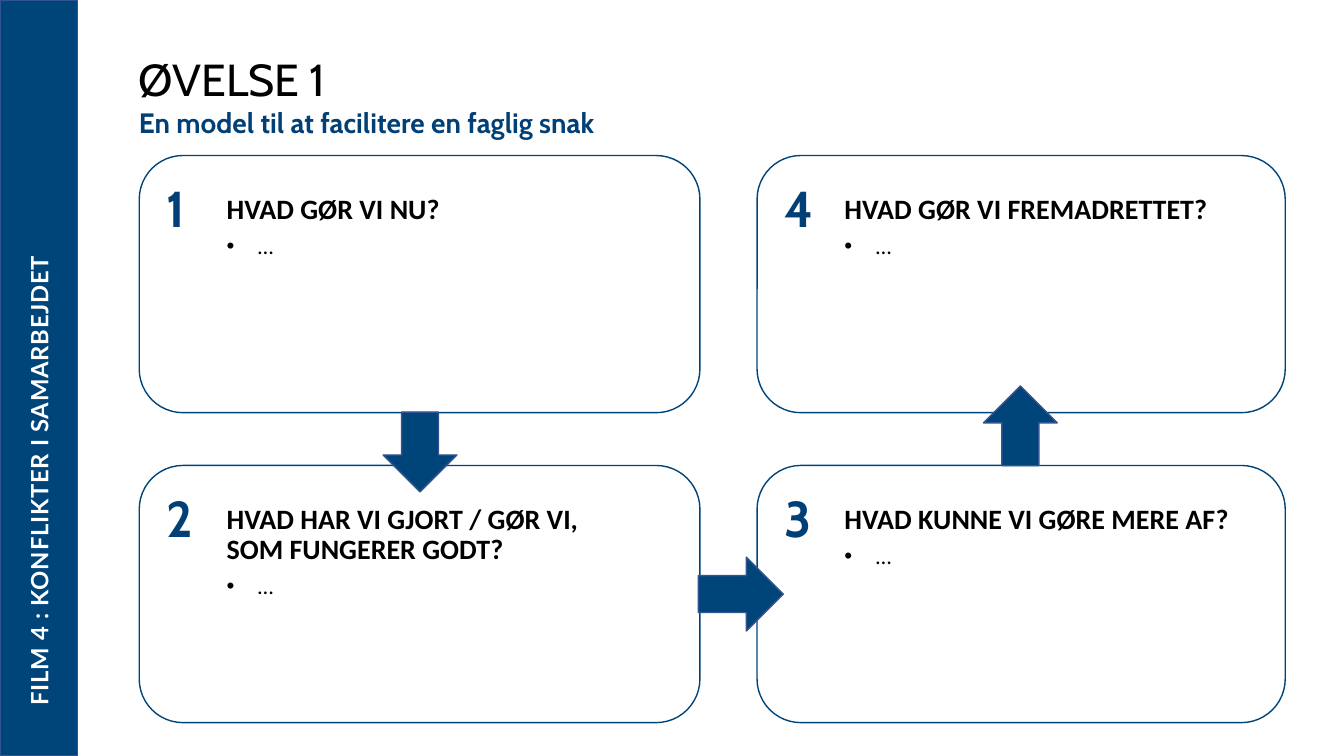
from pptx import Presentation
from pptx.dml.color import RGBColor
from pptx.enum.shapes import MSO_SHAPE as Shape
from pptx.enum.text import MSO_ANCHOR as Anchor, MSO_AUTO_SIZE as AutoSize, PP_ALIGN as Align
from pptx.oxml.ns import qn
from pptx.util import Cm, Pt
from lxml.etree import SubElement

COLORS = {"blue": "00457A", "navy": "004077", "edge": "325491",
          "white": "FFFFFF", "black": "000000"}


class ExerciseSlide:
    heading_font, body_font, banner_font = "Cabin", "Calibri", "Lato"

    def __init__(self, prs):
        self.slide = prs.slides.add_slide(prs.slide_layouts[6])

    def color(self, name):
        return RGBColor.from_string(COLORS[name])

    def style(self, paragraph, font, size, color, bold=False):
        paragraph.alignment = Align.LEFT
        for run in paragraph.runs:
            run.font.name, run.font.size, run.font.bold = font, Pt(size), bold
            run.font.color.rgb = self.color(color)

    def panel(self, preset, box, fill, line):
        panel = self.slide.shapes.add_shape(preset, *map(Cm, box))
        panel.shadow.inherit = False
        panel.fill.solid()
        panel.fill.fore_color.rgb = self.color(fill)
        panel.line.color.rgb = self.color(line)
        panel.line.width = Pt(1)
        return panel

    def text(self, box, lines):
        frame = self.slide.shapes.add_textbox(*map(Cm, box)).text_frame
        frame.word_wrap = True
        frame.auto_size = AutoSize.SHAPE_TO_FIT_TEXT
        frame.text = "\n".join(line[0] for line in lines)
        for paragraph, (_, size, color, bold) in zip(frame.paragraphs, lines):
            self.style(paragraph, self.heading_font, size, color, bold)

    def bullet(self, paragraph):
        props = paragraph._p.get_or_add_pPr()
        props.set("marL", str(Cm(0.79)))
        props.set("indent", str(-Cm(0.79)))
        SubElement(props, qn("a:buFont")).set("typeface", "Arial")
        SubElement(props, qn("a:buChar")).set("char", "•")

    def card(self, number, question, left, top, width, height):
        card = self.panel(Shape.ROUNDED_RECTANGLE, (left, top, width, height), "white", "blue")
        card.adjustments[0] = 0.17
        frame = card.text_frame
        frame.word_wrap = True
        frame.vertical_anchor = Anchor.TOP
        frame.margin_left = Cm(1.88)
        frame.margin_top = frame.margin_right = frame.margin_bottom = Cm(0.67)
        heading = frame.paragraphs[0]
        heading.text = question
        answer = frame.add_paragraph()
        answer.text = "…"
        for paragraph, size in ((heading, 20), (answer, 16)):
            paragraph.line_spacing = 0.9
            paragraph.space_after = Pt(size * 0.35)
            self.style(paragraph, self.body_font, size, "black", paragraph is heading)
        self.bullet(answer)
        self.text((left + 0.44, top + 0.41, 1.09, 1.8), [(number, 36, "navy", True)])

    def arrow(self, box, rotation):
        self.panel(Shape.RIGHT_ARROW, box, "blue", "edge").rotation = rotation

    def banner(self, title, box):
        frame = self.panel(Shape.RECTANGLE, box, "blue", "edge").text_frame
        frame.text = title
        frame.vertical_anchor = Anchor.MIDDLE
        frame.margin_bottom = Cm(1.27)
        frame._txBody.bodyPr.set("vert", "vert270")
        self.style(frame.paragraphs[0], self.banner_font, 17, "white", True)
        frame.paragraphs[0].runs[0].font._element.set("spc", "50")


def main():
    prs = Presentation()
    prs.slide_width, prs.slide_height = Cm(33.87), Cm(19.05)
    exercise = ExerciseSlide(prs)

    # Question cards, counter-clockwise from top left
    columns = ((3.51, 14.13), (19.08, 13.31))
    rows, card_height = (3.92, 11.73), 6.48
    questions = (
        ("HVAD GØR VI NU?", 0, 0),
        ("HVAD HAR VI GJORT / GØR VI, \vSOM FUNGERER GODT?", 0, 1),
        ("HVAD KUNNE VI GØRE MERE AF?", 1, 1),
        ("HVAD GØR VI FREMADRETTET?", 1, 0),
    )
    for number, (question, column, row) in enumerate(questions, start=1):
        left, width = columns[column]
        exercise.card(str(number), question, left, rows[row], width, card_height)

    # Side banner
    exercise.banner("FILM 4 : KONFLIKTER I SAMARBEJDET", (0, 0, 1.96, 19.05))

    # Arrows from card to card
    exercise.arrow((9.58, 10.46, 2.01, 1.86), 90)
    exercise.arrow((17.6, 14.04, 2.14, 1.86), 0)
    exercise.arrow((24.71, 9.8, 2.01, 1.86), 270)

    # Title
    exercise.text((3.25, 1.19, 29.13, 2.49), [
        ("ØVELSE 1", 32, "black", False),
        ("En model til at facilitere en faglig snak", 20, "navy", True),
    ])

    prs.save("out.pptx")


if __name__ == "__main__":
    main()
